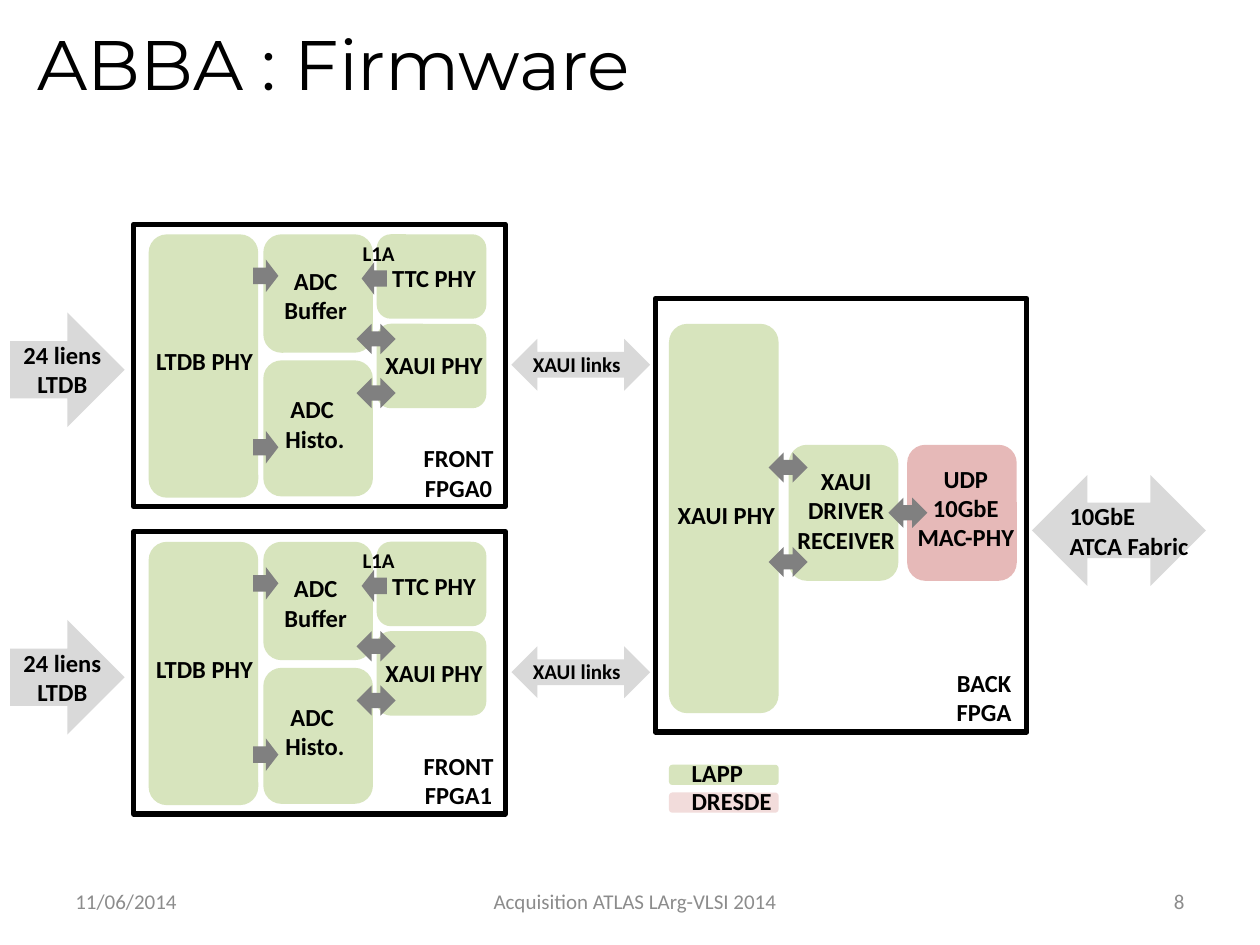
from typing import NamedTuple

from pptx import Presentation
from pptx.dml.color import RGBColor
from pptx.enum.shapes import MSO_SHAPE as Preset
from pptx.enum.text import MSO_ANCHOR as Anchor, MSO_AUTO_SIZE as AutoSize, PP_ALIGN as Align
from pptx.util import Inches, Pt

COLOURS = {
    "black": "000000",
    "footer": "8C8C8C",
    "link": "D9D9D9",
    "flow": "808080",
    "lapp": "D7E4BD",
    "dresde": "E6B9B8",
    "dresde key": "F2DCDB",
}
BLOCK_WIDTH = 0.87
LABEL_WIDTH = 0.99
FRONT_PITCH = 2.44


class Form(NamedTuple):
    left: float
    top: float
    width: float
    height: float
    colour: str = "lapp"
    preset: Preset = Preset.ROUNDED_RECTANGLE
    rotation: int = 0


class Label(NamedTuple):
    left: float
    top: float
    width: float
    height: float
    text: str
    align: Align = Align.CENTER
    size: int = 14
    bold: bool = True
    colour: str = "black"
    anchor: Anchor = Anchor.TOP


def rgb(name: str) -> RGBColor:
    return RGBColor.from_string(COLOURS[name])


def place(item: Form | Label, shift: float = 0) -> list[int]:
    return [Inches(v) for v in (item.left, item.top + shift, item.width, item.height)]


def draw_form(page, form: Form, shift: float = 0) -> None:
    shape = page.shapes.add_shape(form.preset, *place(form, shift))
    shape.shadow.inherit = False
    shape.rotation = form.rotation
    shape.fill.solid()
    shape.fill.fore_color.rgb = rgb(form.colour)
    shape.line.fill.background()


def draw_frame(page, frame: Form, shift: float = 0) -> None:
    """Draw the thick unfilled outline of an FPGA."""
    shape = page.shapes.add_shape(Preset.RECTANGLE, *place(frame, shift))
    shape.shadow.inherit = False
    shape.fill.background()
    shape.line.color.rgb = rgb(frame.colour)
    shape.line.width = Pt(3)


def style_text(text_frame, text: str, align: Align, font: dict, colour: str) -> None:
    text_frame.text = text
    text_frame.word_wrap = True
    for para in text_frame.paragraphs:
        para.alignment = align
        for span in para.runs:
            for name, value in font.items():
                setattr(span.font, name, value)
            span.font.color.rgb = rgb(colour)


def draw_label(page, label: Label, shift: float = 0) -> None:
    box = page.shapes.add_textbox(*place(label, shift))
    box.text_frame.vertical_anchor = label.anchor
    font = {"name": "Calibri", "size": Pt(label.size), "bold": label.bold}
    style_text(box.text_frame, label.text, label.align, font, label.colour)


def block(left: float, top: float, height: float, colour: str = "lapp") -> Form:
    return Form(left, top, BLOCK_WIDTH, height, colour)


def one_way(left: float, top: float, rotation: int = 0) -> Form:
    return Form(left, top, 0.2, 0.26, "flow", Preset.RIGHT_ARROW, rotation)


def two_way(left: float, top: float) -> Form:
    return Form(left, top, 0.31, 0.24, "flow", Preset.LEFT_RIGHT_ARROW)


def footer(left: float, width: float, text: str, align: Align) -> Label:
    return Label(left, 6.95, width, 0.4, text, align, 12, False, "footer", Anchor.MIDDLE)


FRONT_FRAME = Form(1.06, 1.78, 2.95, 2.24, "black")
FRONT_FORMS = [
    Form(0.08, 2.48, 0.91, 0.91, "link", Preset.RIGHT_ARROW),
    Form(4.06, 2.69, 1.1, 0.41, "link", Preset.LEFT_RIGHT_ARROW),
    block(1.18, 1.86, 2.09),
    block(2.09, 2.86, 1.08),
    block(2.09, 1.86, 0.94),
    block(2.99, 2.57, 0.67),
    block(2.99, 1.86, 0.67),
    one_way(2.87, 2.08, 180),
    one_way(2.01, 2.06),
    one_way(2.01, 3.42),
    two_way(2.83, 2.57),
    two_way(2.83, 3.0),
]
FRONT_LABELS = [
    Label(0, 2.65, LABEL_WIDTH, 0.57, "24 liens\nLTDB"),
    Label(1.14, 2.7, LABEL_WIDTH, 0.34, "LTDB PHY", Align.LEFT),
    Label(2.01, 2.06, LABEL_WIDTH, 0.57, "ADC Buffer"),
    Label(1.97, 3.08, 1.06, 0.57, "ADC \nHisto."),
    Label(2.95, 2.73, LABEL_WIDTH, 0.34, "XAUI PHY"),
    Label(2.95, 2.04, LABEL_WIDTH, 0.34, "TTC PHY"),
    Label(2.76, 1.86, 0.49, 0.3, "L1A", size=12),
    Label(4.13, 2.74, LABEL_WIDTH, 0.3, "XAUI links", Align.LEFT, 12),
]
BACK_FRAME = Form(5.2, 2.37, 2.95, 3.44, "black")
BACK_FORMS = [
    block(5.31, 2.57, 3.09),
    block(6.26, 3.53, 1.08),
    block(7.2, 3.53, 1.08, "dresde"),
    two_way(6.1, 3.59),
    two_way(6.1, 4.34),
    two_way(7.05, 3.95),
    Form(8.19, 3.77, 1.38, 0.88, "link", Preset.LEFT_RIGHT_ARROW),
    block(5.31, 6.07, 0.16),
    block(5.31, 6.29, 0.16, "dresde key"),
]
BACK_LABELS = [
    Label(5.28, 3.92, LABEL_WIDTH, 0.34, "XAUI PHY", Align.LEFT),
    Label(7.24, 5.25, 1.14, 0.57, "BACK\nFPGA"),
    Label(6.22, 3.65, LABEL_WIDTH, 1.04, "XAUI DRIVER RECEIVER"),
    Label(7.17, 3.63, LABEL_WIDTH, 1.04, "UDP 10GbE MAC-PHY"),
    Label(8.39, 3.93, 1.18, 0.57, "10GbE\nATCA Fabric", Align.LEFT),
    Label(5.39, 5.97, 0.79, 0.34, "LAPP", Align.LEFT),
    Label(5.39, 6.19, 0.87, 0.34, "DRESDE", Align.LEFT),
]
FOOTERS = [
    footer(0.5, 2.33, "11/06/2014", Align.LEFT),
    footer(3.07, 3.94, "Acquisition ATLAS LArg-VLSI 2014", Align.CENTER),
    footer(7.17, 2.33, "8", Align.RIGHT),
]


def draw_title(page, text: str) -> None:
    title = page.shapes.title
    position = {"left": 0.2, "top": 0.18, "width": 9.57, "height": 0.63}
    for name, value in position.items():
        setattr(title, name, Inches(value))
    title.text_frame.auto_size = AutoSize.NONE
    title.text_frame.vertical_anchor = Anchor.MIDDLE
    font = {"name": "Montserrat", "size": Pt(40), "bold": False}
    style_text(title.text_frame, text, Align.LEFT, font, "black")


def draw_fpga(page, frame: Form, forms: list[Form], labels: list[Label], shift: float = 0) -> None:
    draw_frame(page, frame, shift)
    for form in forms:
        draw_form(page, form, shift)
    for label in labels:
        draw_label(page, label, shift)


def main() -> None:
    deck = Presentation()
    deck.slide_width, deck.slide_height = Inches(10), Inches(7.5)
    page = deck.slides.add_slide(deck.slide_layouts[5])
    draw_title(page, "ABBA : Firmware")
    for index in range(2):
        name = Label(3.07, 3.47, 1.14, 0.57, f"FRONT FPGA{index}")
        draw_fpga(page, FRONT_FRAME, FRONT_FORMS, [*FRONT_LABELS, name], index * FRONT_PITCH)
    draw_fpga(page, BACK_FRAME, BACK_FORMS, BACK_LABELS)
    for label in FOOTERS:
        draw_label(page, label)
    deck.save("out.pptx")


if __name__ == "__main__":
    main()
